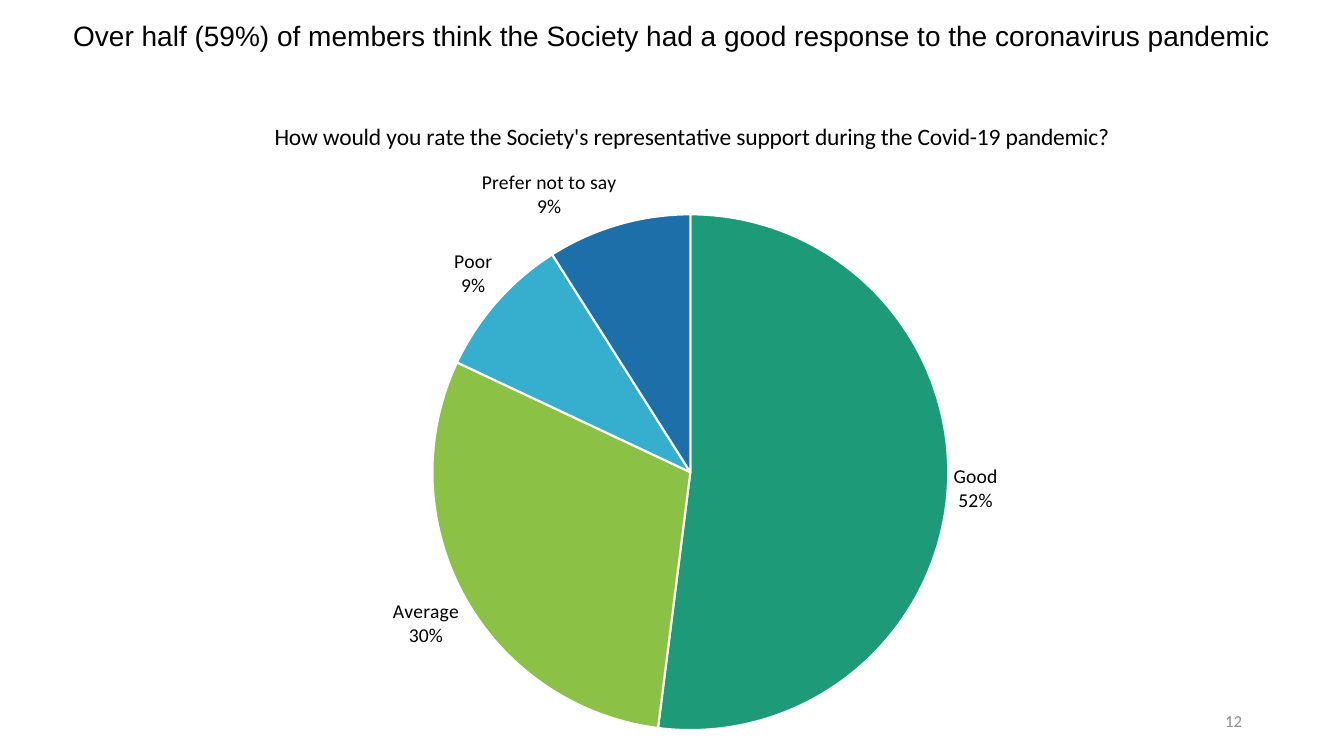
"""Build the slide on how members rate the Society's pandemic response."""
from lxml.etree import SubElement
from pptx import Presentation
from pptx.chart.data import CategoryChartData
from pptx.dml.color import RGBColor
from pptx.enum.chart import XL_CHART_TYPE, XL_LABEL_POSITION
from pptx.enum.text import MSO_ANCHOR, MSO_AUTO_SIZE, PP_ALIGN
from pptx.oxml.ns import qn
from pptx.util import Pt

PX = 914400 / 100.8
BLACK = RGBColor(0x00, 0x00, 0x00)
WHITE = RGBColor(0xFF, 0xFF, 0xFF)
GREY = RGBColor(0x8C, 0x8C, 0x8C)
GREEN = RGBColor(0x1D, 0x9A, 0x78)
LIME = RGBColor(0x8B, 0xC1, 0x45)
SKY = RGBColor(0x36, 0xAF, 0xCE)
BLUE = RGBColor(0x1D, 0x6F, 0xA9)

RATINGS = [
    ("Good", 52, GREEN),
    ("Average", 30, LIME),
    ("Poor", 9, SKY),
    ("Prefer not to say", 9, BLUE),
]


def px(*lengths):
    return [round(length * PX) for length in lengths]


def place(parent, index, **settings):
    for old in parent.findall(qn("c:layout")):
        parent.remove(old)
    layout = SubElement(parent, qn("c:layout"))
    manual = SubElement(layout, qn("c:manualLayout"))
    for name, value in settings.items():
        SubElement(manual, qn(f"c:{name}")).set("val", str(value))
    parent.insert(index, layout)


deck = Presentation()
deck.slide_width, deck.slide_height = px(1344, 756)
page = deck.slides.add_slide(deck.slide_layouts[5])

title = page.shapes.title
title.left, title.top, title.width, title.height = px(0, -2, 1344, 79)
frame = title.text_frame
frame.auto_size = MSO_AUTO_SIZE.NONE
frame.vertical_anchor = MSO_ANCHOR.MIDDLE
para = frame.paragraphs[0]
para.alignment = PP_ALIGN.CENTER
para.line_spacing = 0.9
span = para.add_run()
span.text = "Over half (59%) of members think the Society had a good response to the coronavirus pandemic"
span.font.size = Pt(20)
span.font.name = "Arial"
span.font.color.rgb = BLACK

data = CategoryChartData(number_format="0")
data.categories = [name for name, share, color in RATINGS]
data.add_series("Series 1", [share for name, share, color in RATINGS])
chart = page.shapes.add_chart(XL_CHART_TYPE.PIE, *px(108, 90, 1159, 654), data).chart
chart.has_legend = False
chart.font.size = Pt(14)
chart.font.name = "Calibri"
chart.font.color.rgb = BLACK

heading = chart.chart_title
heading.include_in_layout = False
span = heading.text_frame.paragraphs[0].add_run()
span.text = "How would you rate the Society's representative support during the Covid-19 pandemic?"
span.font.size = Pt(16.8)
span.font.bold = False
span.font.name = "Calibri"
span.font.color.rgb = BLACK
place(heading._element, 1, xMode="edge", yMode="edge", x=0.14, y=0.04)

plot = chart.plots[0]
plot.vary_by_categories = True
place(plot._element.getparent(), 0, layoutTarget="inner", xMode="edge", yMode="edge",
      x=0.28, y=0.19, w=0.445, h=0.789)

series = plot.series[0]
for index, (name, share, color) in enumerate(RATINGS):
    wedge = series.points[index].format
    wedge.fill.solid()
    wedge.fill.fore_color.rgb = color
    wedge.line.color.rgb = WHITE
    wedge.line.width = Pt(1.5)

labels = series.data_labels
labels.show_value = False
labels.show_category_name = True
labels.show_percentage = True
labels.number_format = "0%"
labels.number_format_is_linked = False
labels.position = XL_LABEL_POSITION.OUTSIDE_END
labels.font.size = Pt(14)
labels.font.name = "Calibri"
labels.font.color.rgb = BLACK
separator = SubElement(labels._element, qn("c:separator"))
separator.text = "\n"
labels._element.find(qn("c:showBubbleSize")).addnext(separator)

box = page.shapes.add_textbox(*px(950, 701, 302, 40))
frame = box.text_frame
frame.word_wrap = True
frame.vertical_anchor = MSO_ANCHOR.MIDDLE
para = frame.paragraphs[0]
para.alignment = PP_ALIGN.RIGHT
span = para.add_run()
span.text = "12"
span.font.size = Pt(12)
span.font.name = "Calibri"
span.font.color.rgb = GREY

deck.save("out.pptx")
